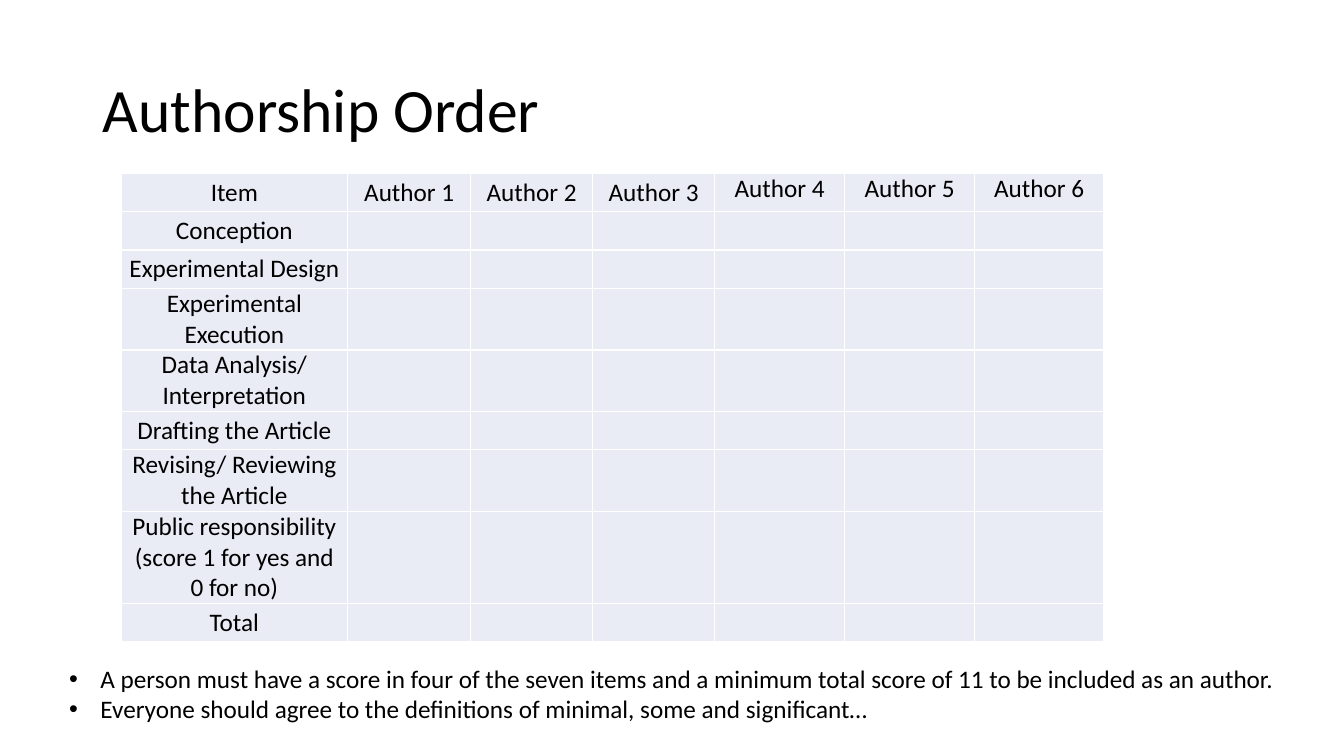
from lxml.etree import SubElement
from pptx import Presentation
from pptx.dml.color import RGBColor
from pptx.enum.text import MSO_ANCHOR as Anchor, MSO_AUTO_SIZE as AutoSize, PP_ALIGN as Align
from pptx.oxml.ns import qn
from pptx.util import Inches, Pt

WIDTH, HEIGHT = Inches(13.333), Inches(7.5)
FONT, INK, CELL, LINE = "Calibri", "000000", "E9EBF5", "FFFFFF"
ITEMS = [
    "Conception",
    "Experimental Design",
    "Experimental Execution",
    "Data Analysis/ Interpretation",
    "Drafting the Article",
    "Revising/ Reviewing the Article",
    "Public responsibility (score 1 for yes and 0 for no)",
    "Total",
]
AUTHORS = [f"Author {number}" for number in range(1, 7)]
COLUMN_INCHES = [2.25, 1.22, 1.21, 1.21, 1.29, 1.29, 1.28]
COLUMN_SHARES = [inches / 13.333 for inches in COLUMN_INCHES]
ROW_SHARE, TALL_ROW_SHARE = 0.38 / 7.5, 0.75 / 7.5
RULES = [
    "A person must have a score in four of the seven items and a minimum total score of 11 "
    "to be included as an author.",
    "Everyone should agree to the definitions of minimal, some and significant…",
]


def color(value):
    """Turn a hex string into a colour."""
    return RGBColor.from_string(value)


def to_lengths(box):
    """Turn shares of the slide into left, top, width and height."""
    left, top, width, height = box
    return int(left * WIDTH), int(top * HEIGHT), int(width * WIDTH), int(height * HEIGHT)


def place(shape, box):
    """Move a shape to its box."""
    shape.left, shape.top, shape.width, shape.height = to_lengths(box)


def style(para, size, align):
    """Format a paragraph and its runs."""
    para.alignment = align
    para.font.size = Pt(size)
    for span in para.runs:
        span.font.name, span.font.size = FONT, Pt(size)
        span.font.color.rgb = color(INK)


def add_title(page, text, box):
    """Fill the title placeholder."""
    title = page.shapes.title
    place(title, box)
    frame = title.text_frame
    frame.text = text
    frame.auto_size = AutoSize.NONE
    frame.vertical_anchor = Anchor.MIDDLE
    para = frame.paragraphs[0]
    para.line_spacing = 0.9
    style(para, 44, Align.LEFT)


def format_cell(cell, text, anchor):
    """Give a cell its text, white borders and fill."""
    cell.text = text
    cell.margin_left = cell.margin_right = Inches(0.07)
    cell.margin_top = cell.margin_bottom = 0
    cell.vertical_anchor = anchor
    style(cell.text_frame.paragraphs[0], 18, Align.CENTER)
    properties = cell._tc.get_or_add_tcPr()
    for side in ("a:lnL", "a:lnR", "a:lnT", "a:lnB"):
        border = SubElement(properties, qn(side), w=str(Pt(1)))
        SubElement(SubElement(border, qn("a:solidFill")), qn("a:srgbClr"), val=LINE)
    cell.fill.solid()
    cell.fill.fore_color.rgb = color(CELL)


def add_score_table(page, box):
    """Draw the grid of items and authors."""
    grid = [["Item", *AUTHORS]] + [[item] + [""] * len(AUTHORS) for item in ITEMS]
    table = page.shapes.add_table(len(grid), len(grid[0]), *to_lengths(box)).table
    table.first_row = table.horz_banding = False
    for column, share in zip(table.columns, COLUMN_SHARES):
        column.width = int(share * WIDTH)
    for row, texts in zip(table.rows, grid):
        tall = texts[0].startswith("Public")
        row.height = int((TALL_ROW_SHARE if tall else ROW_SHARE) * HEIGHT)
        for index, (cell, text) in enumerate(zip(row.cells, texts)):
            format_cell(cell, text, Anchor.TOP if index > 3 else Anchor.MIDDLE)


def add_rules(page, box):
    """Fill the body placeholder with the bulleted rules."""
    body = page.placeholders[1]
    place(body, box)
    frame = body.text_frame
    frame.text = "\n".join(RULES)
    frame.auto_size = AutoSize.NONE
    frame.vertical_anchor = Anchor.TOP
    for para in frame.paragraphs:
        para.space_before = Pt(0)
        style(para, 18, Align.LEFT)
        properties = para._p.get_or_add_pPr()
        properties.set("marL", str(Inches(0.31)))
        properties.set("indent", str(-Inches(0.31)))
        bullet_font = SubElement(properties, qn("a:buFont"), typeface="Arial")
        bullet_font.addnext(properties.makeelement(qn("a:buChar"), {"char": "•"}))
        default_run = properties.find(qn("a:defRPr"))
        if default_run is not None:
            properties.append(default_run)


def main():
    """Build the authorship slide."""
    deck = Presentation()
    deck.slide_width, deck.slide_height = WIDTH, HEIGHT
    page = deck.slides.add_slide(deck.slide_layouts[1])
    add_title(page, "Authorship Order", (0.069, 0.053, 0.8625, 0.193))
    table_height = ROW_SHARE * len(ITEMS) + TALL_ROW_SHARE
    add_score_table(page, (0.09, 0.2295, sum(COLUMN_SHARES), table_height))
    add_rules(page, (0.044, 0.871, 0.927, 0.095))
    deck.save("out.pptx")


if __name__ == "__main__":
    main()
